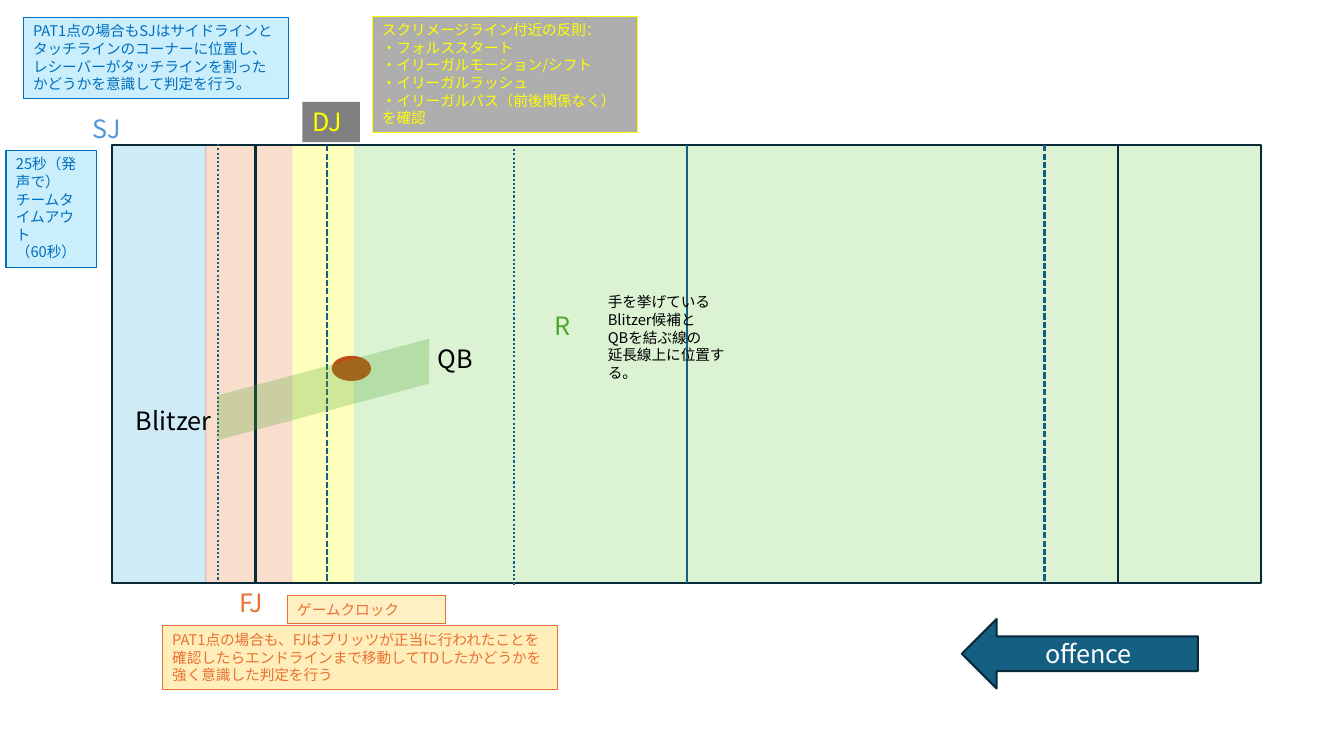
from lxml.etree import SubElement
from pptx import Presentation
from pptx.dml.color import RGBColor
from pptx.enum.dml import MSO_LINE
from pptx.enum.shapes import MSO_CONNECTOR, MSO_SHAPE
from pptx.enum.text import MSO_ANCHOR, MSO_AUTO_SIZE, PP_ALIGN
from pptx.oxml.ns import qn
from pptx.util import Inches, Pt

FONT = "Noto Sans CJK JP"
HEX = {
    "navy": "092A39", "teal": "156082", "cyan": "0F9ED5", "blue": "0070C0",
    "sky": "4E95D9", "ice": "CAEEFB", "yellow": "FFFF00", "lime": "8ED973",
    "green": "4EA72E", "orange": "E97132", "brown": "C04F15", "gold": "FFC000",
    "gray": "808080", "silver": "AEAEAE", "black": "000000", "white": "FFFFFF",
}

# Grid of 1333 columns by 750 rows
CELL = Inches(0.01)
deck = Presentation()
deck.slide_width, deck.slide_height = 1333 * CELL, 750 * CELL
slide = deck.slides.add_slide(deck.slide_layouts[6])


def draw(kind, spot, fill=None, alpha=100, line=None, width=1.5):
    """Add a preset shape; spot is left, top, width, height in cells."""
    shape = slide.shapes.add_shape(kind, *[n * CELL for n in spot])
    shape.shadow.inherit = False
    if fill:
        shape.fill.solid()
        shape.fill.fore_color.rgb = RGBColor.from_string(HEX[fill])
        if alpha < 100:
            tint = shape.fill._xPr.find(qn("a:solidFill"))[0]
            SubElement(tint, qn("a:alpha"), val=str(alpha * 1000))
    else:
        shape.fill.background()
    if line:
        shape.line.color.rgb = RGBColor.from_string(HEX[line])
        shape.line.width = Pt(width)
    else:
        shape.line.fill.background()
    return shape


def write(text, shape=None, spot=None, color="black", size=18,
          align=PP_ALIGN.LEFT, anchor=MSO_ANCHOR.TOP, grow=True):
    """Put text in a shape, or in a new text box at spot."""
    shape = shape or slide.shapes.add_textbox(*[n * CELL for n in spot])
    frame = shape.text_frame
    frame.word_wrap = True
    frame.vertical_anchor = anchor
    frame.auto_size = MSO_AUTO_SIZE.SHAPE_TO_FIT_TEXT if grow else MSO_AUTO_SIZE.NONE
    frame.text = text
    for para in frame.paragraphs:
        para.alignment = align
        for run in para.runs:
            run.font.size = Pt(size)
            run.font.name = FONT
            run.font.color.rgb = RGBColor.from_string(HEX[color])
            SubElement(run._r.rPr, qn("a:ea"), typeface=FONT)


# Field zones
TOP, DEEP = 144, 434
for left, wide, fill, alpha in [
    (111, 94, "cyan", 20), (290, 61, "yellow", 26),
    (351, 901, "lime", 31), (203, 87, "orange", 24),
]:
    draw(MSO_SHAPE.RECTANGLE, (left, TOP, wide, DEEP), fill, alpha)

# Field outline with both goal lines
draw(MSO_SHAPE.FLOWCHART_PREDEFINED_PROCESS, (111, TOP, 1140, DEEP), line="navy")

# Yard lines
for col, top, dash in [
    (681, TOP, None), (324, TOP, MSO_LINE.SQUARE_DOT), (1036, TOP, MSO_LINE.SQUARE_DOT),
    (216, TOP - 1, MSO_LINE.ROUND_DOT), (510, TOP + 4, MSO_LINE.ROUND_DOT),
]:
    yard = slide.shapes.add_connector(
        MSO_CONNECTOR.STRAIGHT, col * CELL, top * CELL, col * CELL, (top + DEEP) * CELL)
    yard.line.color.rgb = RGBColor.from_string(HEX["teal"])
    yard.line.width = Pt(1.5)
    # ROUND_DOT is sysDot; SQUARE_DOT is set to sysDash below
    if dash:
        yard.line.dash_style = dash
        name = "sysDot" if dash == MSO_LINE.ROUND_DOT else "sysDash"
        yard.line._ln.find(qn("a:prstDash")).set("val", name)
    SubElement(yard._element.spPr, qn("a:effectLst"))

# Ball and blitz lane
draw(MSO_SHAPE.OVAL, (329, 353, 39, 25), "brown")
lane = draw(MSO_SHAPE.PARALLELOGRAM, (206, 365, 229, 43), "green", 27)
lane.adjustments[0] = 0.27
lane.rotation = 345

# Direction of play
arrow = draw(MSO_SHAPE.LEFT_ARROW, (954, 614, 234, 69), "teal", line="navy")
write("offence", arrow, color="white", align=PP_ALIGN.CENTER,
      anchor=MSO_ANCHOR.MIDDLE, grow=False)

# Players and judges
for text, left, top, color in [
    ("Blitzer", 125, 397, "black"), ("QB", 424, 336, "black"),
    ("R", 540, 303, "green"), ("SJ", 82, 108, "sky"), ("FJ", 228, 578, "orange"),
]:
    write(text, spot=(left, top, 125, 40), color=color)
write("DJ", draw(MSO_SHAPE.RECTANGLE, (300, 101, 57, 40), "gray"), color="yellow")

# Notes
for text, spot, fill, alpha, color in [
    ("スクリメージライン付近の反則：\n・フォルススタート\n・イリーガルモーション/シフト\n"
     "・イリーガルラッシュ\n・イリーガルパス（前後関係なく）\nを確認",
     (369, 16, 263, 116), "silver", 100, "yellow"),
    ("ゲームクロック", (285, 591, 157, 28), "gold", 23, "orange"),
    ("25秒（発声で）\nチームタイムアウト\n（60秒）",
     (6, 149, 90, 116), "ice", 100, "blue"),
    ("PAT1点の場合も、FJはブリッツが正当に行われたことを確認したら"
     "エンドラインまで移動してTDしたかどうかを強く意識した判定を行う",
     (161, 621, 392, 63), "gold", 27, "orange"),
    ("PAT1点の場合もSJはサイドラインとタッチラインのコーナーに位置し、"
     "レシーバーがタッチラインを割ったかどうかを意識して判定を行う。",
     (23, 17, 263, 81), "ice", 100, "blue"),
]:
    note = draw(MSO_SHAPE.RECTANGLE, spot, fill, alpha, color, 0.75)
    write(text, note, color=color, size=10.5)
write("手を挙げているBlitzer候補と\nQBを結ぶ線の\n延長線上に位置する。",
      spot=(593, 286, 139, 98), size=10.5)

deck.save("out.pptx")
